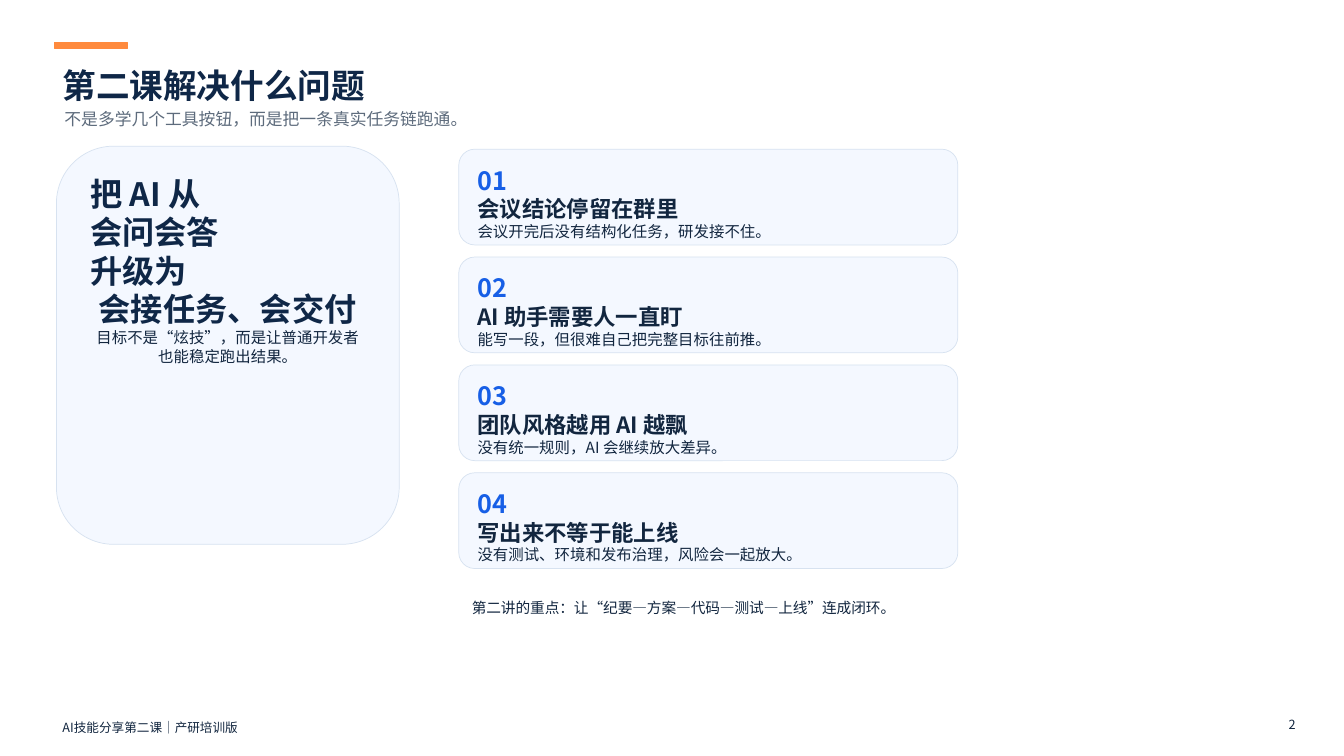
from lxml.etree import SubElement
from pptx import Presentation
from pptx.dml.color import RGBColor
from pptx.enum.shapes import MSO_SHAPE
from pptx.enum.text import MSO_ANCHOR, MSO_AUTO_SIZE, PP_ALIGN
from pptx.oxml.ns import qn
from pptx.util import Pt

PX = 9144  # 100 px to the inch
FONT = "Noto Sans CJK SC"
NAVY, INK, GREY, BLUE = "0F2747", "12263F", "5D6B7C", "175FE6"
ORANGE, PALE, BORDER = "FF8A3D", "F4F8FF", "D7E2F0"
LEFT, CENTER, RIGHT = PP_ALIGN.LEFT, PP_ALIGN.CENTER, PP_ALIGN.RIGHT


def write(shape, lines, inset_x=8, inset_y=6, grow=True):
    """Fill a shape with lines of (text, size, colour, bold, alignment)."""
    frame = shape.text_frame
    frame.word_wrap = True
    frame.auto_size = MSO_AUTO_SIZE.SHAPE_TO_FIT_TEXT if grow else MSO_AUTO_SIZE.NONE
    frame.vertical_anchor = MSO_ANCHOR.TOP
    frame.margin_left = frame.margin_right = inset_x * PX
    frame.margin_top = frame.margin_bottom = inset_y * PX
    for index, (text, size, colour, bold, alignment) in enumerate(lines):
        paragraph = frame.add_paragraph() if index else frame.paragraphs[0]
        paragraph.text = text
        paragraph.alignment = alignment
        paragraph.line_spacing = 1.0
        paragraph.space_before = Pt(0)
        font = paragraph.font
        font.size, font.bold, font.name = Pt(size), bold, FONT
        font.color.rgb = RGBColor.from_string(colour)
        SubElement(font._rPr, qn("a:ea"), typeface=FONT)


def block(kind, left, top, width, height, fill, line):
    """Add a flat shape with a thin outline."""
    shape = slide.shapes.add_shape(kind, left * PX, top * PX, width * PX, height * PX)
    shape.shadow.inherit = False
    shape.fill.solid()
    shape.fill.fore_color.rgb = RGBColor.from_string(fill)
    shape.line.color.rgb = RGBColor.from_string(line)
    shape.line.width = Pt(0.5)
    return shape


presentation = Presentation()
presentation.slide_width, presentation.slide_height = 1333 * PX, 750 * PX
slide = presentation.slides.add_slide(presentation.slide_layouts[5])

# Accent bar and title
block(MSO_SHAPE.RECTANGLE, 54, 42, 72, 6, ORANGE, ORANGE)
title = slide.shapes.title
title.left, title.top, title.width, title.height = 54 * PX, 58 * PX, 660 * PX, 45 * PX
write(title, [("第二课解决什么问题", 24, NAVY, True, LEFT)])

# Subtitle, takeaway, footer and page number
notes = [
    (56, 102, 820, 28, "不是多学几个工具按钮，而是把一条真实任务链跑通。", 12, GREY, LEFT),
    (460, 588, 500, 26, "第二讲的重点：让“纪要—方案—代码—测试—上线”连成闭环。", 10.5, INK, LEFT),
    (54, 708, 360, 18, "AI技能分享第二课｜产研培训版", 9, INK, LEFT),
    (1270, 705, 20, 18, "2", 9, INK, RIGHT),
]
for left, top, width, height, text, size, colour, alignment in notes:
    note = slide.shapes.add_textbox(left * PX, top * PX, width * PX, height * PX)
    write(note, [(text, size, colour, False, alignment)])

# Goal panel
goal = block(MSO_SHAPE.ROUNDED_RECTANGLE, 56, 145, 340, 395, PALE, BORDER)
goal_lines = [(text, 23, NAVY, True, LEFT) for text in ("把 AI 从", "会问会答", "升级为")]
goal_lines += [
    ("会接任务、会交付", 23, NAVY, True, CENTER),
    ("目标不是“炫技”，而是让普通开发者也能稳定跑出结果。", 11, INK, False, CENTER),
]
write(goal, goal_lines, 17, 11, grow=False)

# Problem cards
problems = [
    ("会议结论停留在群里", "会议开完后没有结构化任务，研发接不住。"),
    ("AI 助手需要人一直盯", "能写一段，但很难自己把完整目标往前推。"),
    ("团队风格越用 AI 越飘", "没有统一规则，AI 会继续放大差异。"),
    ("写出来不等于能上线", "没有测试、环境和发布治理，风险会一起放大。"),
]
for index, (problem, detail) in enumerate(problems):
    card = block(MSO_SHAPE.ROUNDED_RECTANGLE, 455, 148 + 107 * index, 495, 95, PALE, BORDER)
    write(card, [
        (f"{index + 1:02}", 18, BLUE, True, LEFT),
        (problem, 16, INK, True, LEFT),
        (detail, 11, INK, False, LEFT),
    ], 14, 11, grow=False)

presentation.save("out.pptx")
